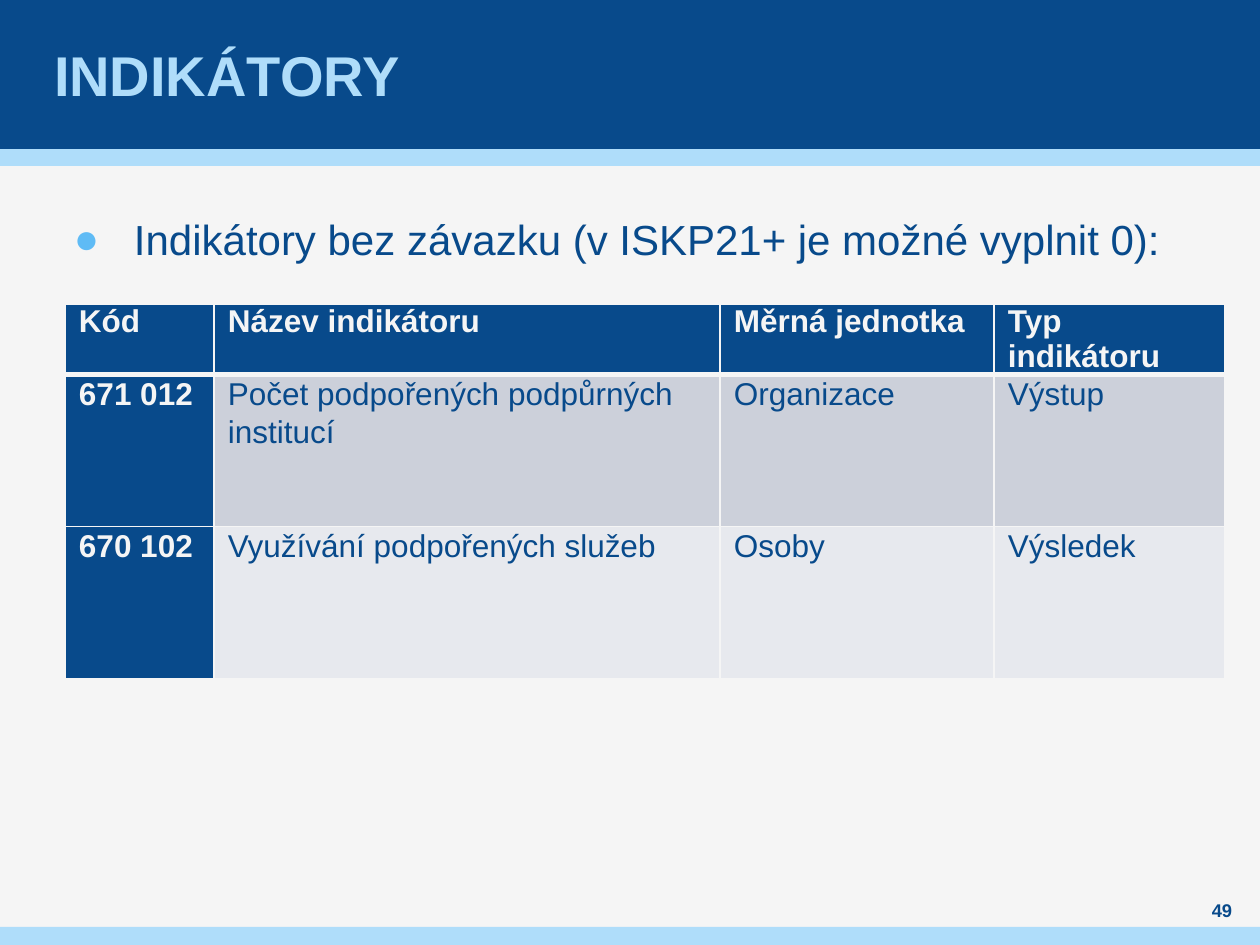
from dataclasses import dataclass

from lxml.etree import SubElement
from pptx import Presentation
from pptx.dml.color import RGBColor
from pptx.enum.shapes import MSO_SHAPE as Preset
from pptx.enum.text import MSO_ANCHOR as Anchor, MSO_AUTO_SIZE as AutoSize, PP_ALIGN as Align
from pptx.oxml.ns import qn
from pptx.util import Emu, Pt

NAVY, SKY, BULLET, PAPER = "084A8B", "AFDDFA", "5FBBF5", "F5F5F5"
BODY_FILLS = ("CCD0DA", "E7E9EE")
FONT = "Arial"
COLUMN_WIDTHS = (149, 506, 274, 231)
ROW_HEIGHTS = (62, 152, 152)
TABLE_ROWS = (
    ("Kód", "Název indikátoru", "Měrná jednotka", "Typ indikátoru"),
    ("671 012", "Počet podpořených podpůrných institucí", "Organizace", "Výstup"),
    ("670 102", "Využívání podpořených služeb", "Osoby", "Výsledek"),
)


@dataclass(frozen=True)
class Box:
    left: int
    top: int
    width: int
    height: int


@dataclass(frozen=True)
class Band:
    box: Box
    color: str


@dataclass(frozen=True)
class Style:
    size: float
    color: str
    bold: bool = False


BANDS = (
    Band(Box(0, 148, 1260, 18), SKY),
    Band(Box(0, 0, 1260, 149), NAVY),
    Band(Box(0, 927, 1260, 18), SKY),
)


def px(length: int) -> Emu:
    return Emu(round(length * 914400 / 126))


def rgb(color: str) -> RGBColor:
    return RGBColor.from_string(color)


def frame(box: Box) -> tuple[Emu, ...]:
    return px(box.left), px(box.top), px(box.width), px(box.height)


def add_run(paragraph, text: str, style: Style) -> None:
    run = paragraph.add_run()
    run.text = text
    run.font.name = FONT
    run.font.size = Pt(style.size)
    run.font.bold = style.bold
    run.font.color.rgb = rgb(style.color)


def set_spacing(paragraph, points: int, line=None) -> None:
    if line is not None:
        paragraph.line_spacing = line
    paragraph.space_before = paragraph.space_after = Pt(points)


def set_indent(paragraph, left: int, first: int):
    properties = paragraph._p.get_or_add_pPr()
    properties.set("marL", str(px(left)))
    properties.set("indent", str(px(first)))
    return properties


def add_bullet(properties) -> None:
    color = SubElement(properties, qn("a:buClr"))
    SubElement(color, qn("a:srgbClr"), val=BULLET)
    SubElement(properties, qn("a:buFont"), typeface=FONT)
    SubElement(properties, qn("a:buChar"), char="●")


def set_frame(text_frame, side: int = 0, anchor=Anchor.TOP) -> None:
    text_frame.word_wrap = True
    text_frame.auto_size = AutoSize.NONE
    text_frame.vertical_anchor = anchor
    text_frame.margin_left = text_frame.margin_right = px(side)
    text_frame.margin_top = text_frame.margin_bottom = 0


def add_band(slide, band: Band) -> None:
    shape = slide.shapes.add_shape(Preset.RECTANGLE, *frame(band.box))
    shape.shadow.inherit = False
    shape.fill.solid()
    shape.fill.fore_color.rgb = rgb(band.color)
    shape.line.fill.background()


def place_title(slide, box: Box, text: str) -> None:
    title = slide.shapes.title
    title.left, title.top, title.width, title.height = frame(box)
    set_frame(title.text_frame, 5, Anchor.MIDDLE)
    paragraph = title.text_frame.paragraphs[0]
    paragraph.alignment = Align.LEFT
    add_run(paragraph, text, Style(32, SKY, True))
    slide.shapes._spTree.append(title._element)


def add_text(slide, box: Box, text: str, style: Style, anchor=Anchor.TOP):
    shape = slide.shapes.add_textbox(*frame(box))
    set_frame(shape.text_frame, anchor=anchor)
    paragraph = shape.text_frame.paragraphs[0]
    add_run(paragraph, text, style)
    return paragraph


def add_border(cell, side: str, width: int) -> None:
    line = SubElement(cell._tc.get_or_add_tcPr(), qn(f"a:{side}"), w=str(Pt(width)))
    fill = SubElement(line, qn("a:solidFill"))
    SubElement(fill, qn("a:srgbClr"), val=PAPER)


def fill_cell(cell, text: str, row: int, column: int) -> None:
    heading = row == 0 or column == 0
    thick_side = {0: "lnB", 1: "lnT"}.get(row)
    cell.margin_left = cell.margin_right = px(9)
    cell.margin_top = cell.margin_bottom = 0
    for side in ("lnL", "lnR", "lnT", "lnB"):
        add_border(cell, side, 3 if side == thick_side else 1)
    cell.fill.solid()
    cell.fill.fore_color.rgb = rgb(NAVY if heading else BODY_FILLS[row - 1])
    paragraph = cell.text_frame.paragraphs[0]
    set_spacing(paragraph, 3, 1.07 if row else None)
    set_indent(paragraph, 5, 0)
    add_run(paragraph, text, Style(18, PAPER if heading else NAVY, heading))


def add_indicator_table(slide, left: int, top: int) -> None:
    box = Box(left, top, sum(COLUMN_WIDTHS), sum(ROW_HEIGHTS))
    table = slide.shapes.add_table(len(ROW_HEIGHTS), len(COLUMN_WIDTHS), *frame(box)).table
    for column, width in zip(table.columns, COLUMN_WIDTHS):
        column.width = px(width)
    for row, height in zip(table.rows, ROW_HEIGHTS):
        row.height = px(height)
    for row, texts in enumerate(TABLE_ROWS):
        for column, text in enumerate(texts):
            fill_cell(table.cell(row, column), text, row, column)


def main() -> None:
    presentation = Presentation()
    presentation.slide_width, presentation.slide_height = px(1260), px(945)
    slide = presentation.slides.add_slide(presentation.slide_layouts[5])
    slide.background.fill.solid()
    slide.background.fill.fore_color.rgb = rgb(PAPER)
    for band in BANDS:
        add_band(slide, band)
    place_title(slide, Box(49, 0, 1160, 149), "INDIKÁTORY")

    statement = add_text(
        slide,
        Box(74, 214, 1111, 595),
        "Indikátory bez závazku (v ISKP21+ je možné vyplnit 0):",
        Style(24, NAVY),
    )
    set_spacing(statement, 6, Pt(28.8))
    add_bullet(set_indent(statement, 60, -60))

    number = add_text(slide, Box(1190, 898, 64, 25), "49", Style(10.5, NAVY, True), Anchor.MIDDLE)
    number.alignment = Align.CENTER
    add_indicator_table(slide, 65, 304)
    presentation.save("out.pptx")


if __name__ == "__main__":
    main()
